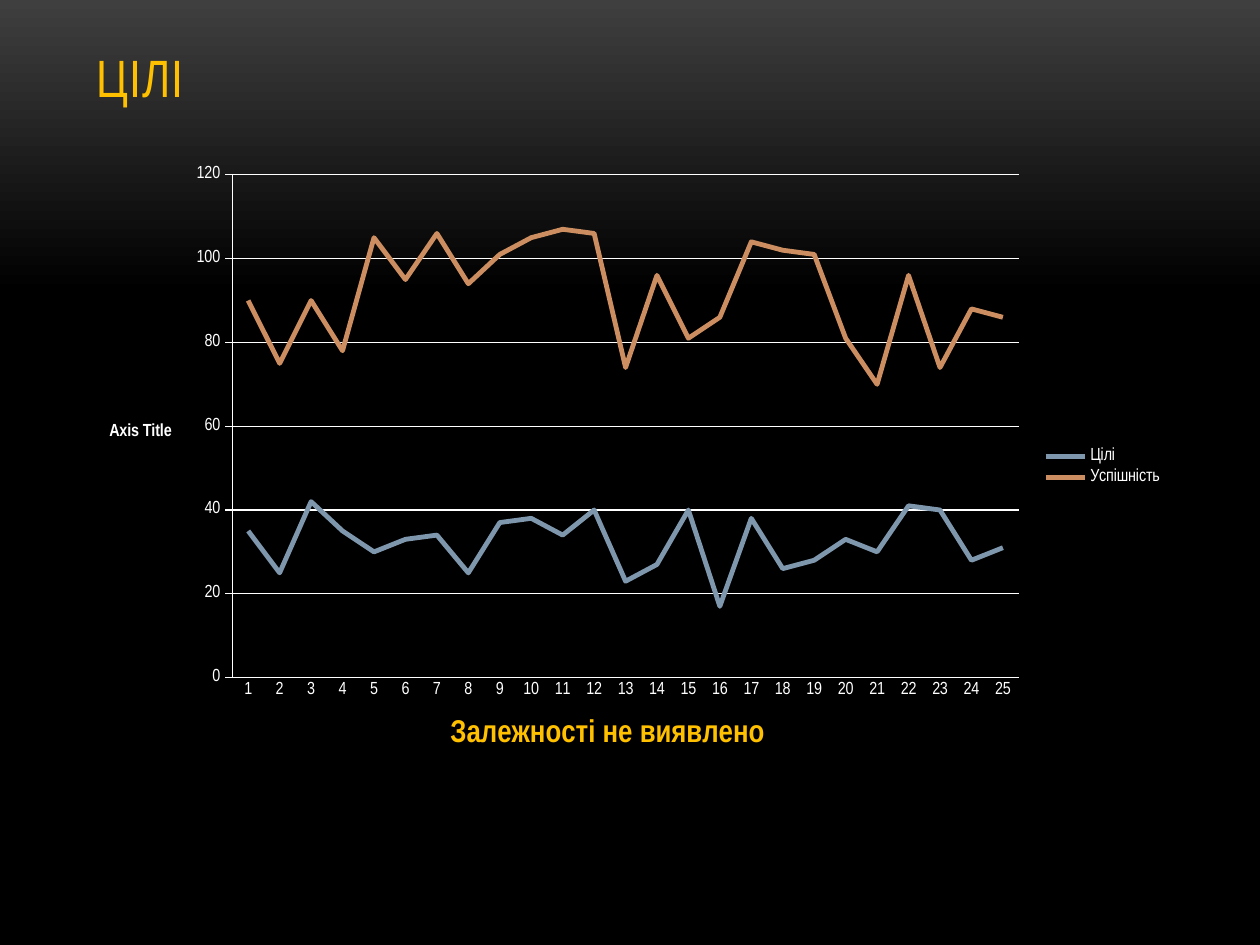
from dataclasses import dataclass

from lxml import etree
from pptx import Presentation
from pptx.chart.data import CategoryChartData
from pptx.dml.color import RGBColor
from pptx.enum.chart import XL_CHART_TYPE, XL_LEGEND_POSITION, XL_TICK_MARK
from pptx.enum.text import MSO_ANCHOR, PP_ALIGN
from pptx.oxml.ns import qn
from pptx.util import Pt

LINE_CHART = XL_CHART_TYPE.LINE
LEGEND_RIGHT = XL_LEGEND_POSITION.RIGHT
TICK_NONE, TICK_OUTSIDE = XL_TICK_MARK.NONE, XL_TICK_MARK.OUTSIDE
ANCHOR_BOTTOM = MSO_ANCHOR.BOTTOM
ALIGN_LEFT = PP_ALIGN.LEFT
TITLE_ONLY_LAYOUT = 5


@dataclass(frozen=True)
class Theme:
    font: str = "Arial Narrow"
    accent: RGBColor = RGBColor(0xFF, 0xC0, 0x00)
    text: RGBColor = RGBColor(0xFF, 0xFF, 0xFF)
    background_top: RGBColor = RGBColor(0x3F, 0x3F, 0x3F)
    background: RGBColor = RGBColor(0x00, 0x00, 0x00)
    title_size: float = 30
    axis_title_size: float = 18
    label_size: float = 10
    grid_width: float = 0.75
    series_width: float = 2.75


@dataclass(frozen=True)
class Series:
    name: str
    values: tuple[int, ...]
    color: RGBColor


THEME = Theme()
SERIES = (
    Series("Цілі",
           (35, 25, 42, 35, 30, 33, 34, 25, 37, 38, 34, 40, 23,
            27, 40, 17, 38, 26, 28, 33, 30, 41, 40, 28, 31),
           RGBColor(0x7E, 0x97, 0xAD)),
    Series("Успішність",
           (90, 75, 90, 78, 105, 95, 106, 94, 101, 105, 107, 106, 74,
            96, 81, 86, 104, 102, 101, 81, 70, 96, 74, 88, 86),
           RGBColor(0xCC, 0x8E, 0x60)),
)
PLOT_AREA = {"x": 0.136, "y": 0.032, "w": 0.72, "h": 0.805}


def format_font(font, size: float, color: RGBColor, bold: bool = False) -> None:
    font.name = THEME.font
    font.size = Pt(size)
    font.bold = bold
    font.color.rgb = color


def paint_background(slide) -> None:
    fill = slide.background.fill
    fill.gradient()
    fill.gradient_angle = 270
    stops = ((0, THEME.background_top), (0.31, THEME.background))
    for stop, (position, color) in zip(fill.gradient_stops, stops):
        stop.position = position
        stop.color.rgb = color


def add_title(slide, text: str) -> None:
    title = slide.shapes.title
    title.left, title.top, title.width, title.height = Pt(48), Pt(21.6), Pt(624), Pt(44)
    frame = title.text_frame
    frame.vertical_anchor = ANCHOR_BOTTOM
    paragraph = frame.paragraphs[0]
    paragraph.alignment = ALIGN_LEFT
    run = paragraph.add_run()
    run.text = text
    format_font(run.font, THEME.title_size, THEME.accent)
    run._r.get_or_add_rPr().set("spc", "50")


def add_axis_title(axis, text: str, size: float, color: RGBColor) -> None:
    """Give the axis a bold title that reads horizontally."""
    frame = axis.axis_title.text_frame
    run = frame.paragraphs[0].add_run()
    run.text = text
    format_font(run.font, size, color, bold=True)
    body = frame._txBody.find(qn("a:bodyPr"))
    body.set("rot", "0")
    body.set("vert", "horz")


def format_line(line, color: RGBColor, width: float) -> None:
    line.color.rgb = color
    line.width = Pt(width)


def place_plot_area(chart) -> None:
    """Fix the inner plot area as fractions of the chart frame."""
    plot_area = chart._chartSpace.chart.plotArea
    for layout in plot_area.findall(qn("c:layout")):
        plot_area.remove(layout)
    layout = etree.Element(qn("c:layout"))
    manual = etree.SubElement(layout, qn("c:manualLayout"))
    settings = {"layoutTarget": "inner", "xMode": "edge", "yMode": "edge", **PLOT_AREA}
    for name, value in settings.items():
        etree.SubElement(manual, qn(f"c:{name}")).set("val", str(value))
    plot_area.insert(0, layout)


def add_line_chart(slide, series_list: tuple[Series, ...]) -> None:
    data = CategoryChartData()
    data.categories = [str(number + 1) for number in range(len(series_list[0].values))]
    for series in series_list:
        data.add_series(series.name, series.values)
    chart = slide.shapes.add_chart(
        LINE_CHART, Pt(48), Pt(88.5), Pt(624), Pt(357), data).chart
    format_font(chart.font, THEME.label_size, THEME.text)
    chart.has_title = False
    chart.has_legend = True
    chart.legend.position = LEGEND_RIGHT
    chart.legend.include_in_layout = False
    chart.plots[0].vary_by_categories = False
    for line_series, series in zip(chart.plots[0].series, series_list):
        line_series.smooth = False
        format_line(line_series.format.line, series.color, THEME.series_width)

    category_axis, value_axis = chart.category_axis, chart.value_axis
    for axis, tick in ((category_axis, TICK_NONE), (value_axis, TICK_OUTSIDE)):
        axis.major_tick_mark = tick
        axis.minor_tick_mark = TICK_NONE
        format_line(axis.format.line, THEME.text, THEME.grid_width)
    value_axis.minimum_scale, value_axis.maximum_scale = 0, 120
    value_axis.major_unit = 20
    value_axis.has_major_gridlines = True
    format_line(value_axis.major_gridlines.format.line, THEME.text, THEME.grid_width)
    add_axis_title(category_axis, "Залежності не виявлено",
                   THEME.axis_title_size, THEME.accent)
    add_axis_title(value_axis, "Axis Title", THEME.label_size, THEME.text)
    place_plot_area(chart)


def main() -> None:
    presentation = Presentation()
    presentation.slide_width, presentation.slide_height = Pt(720), Pt(540)
    slide = presentation.slides.add_slide(presentation.slide_layouts[TITLE_ONLY_LAYOUT])
    paint_background(slide)
    add_title(slide, "ЦІЛІ")
    add_line_chart(slide, SERIES)
    presentation.save("out.pptx")


if __name__ == "__main__":
    main()
